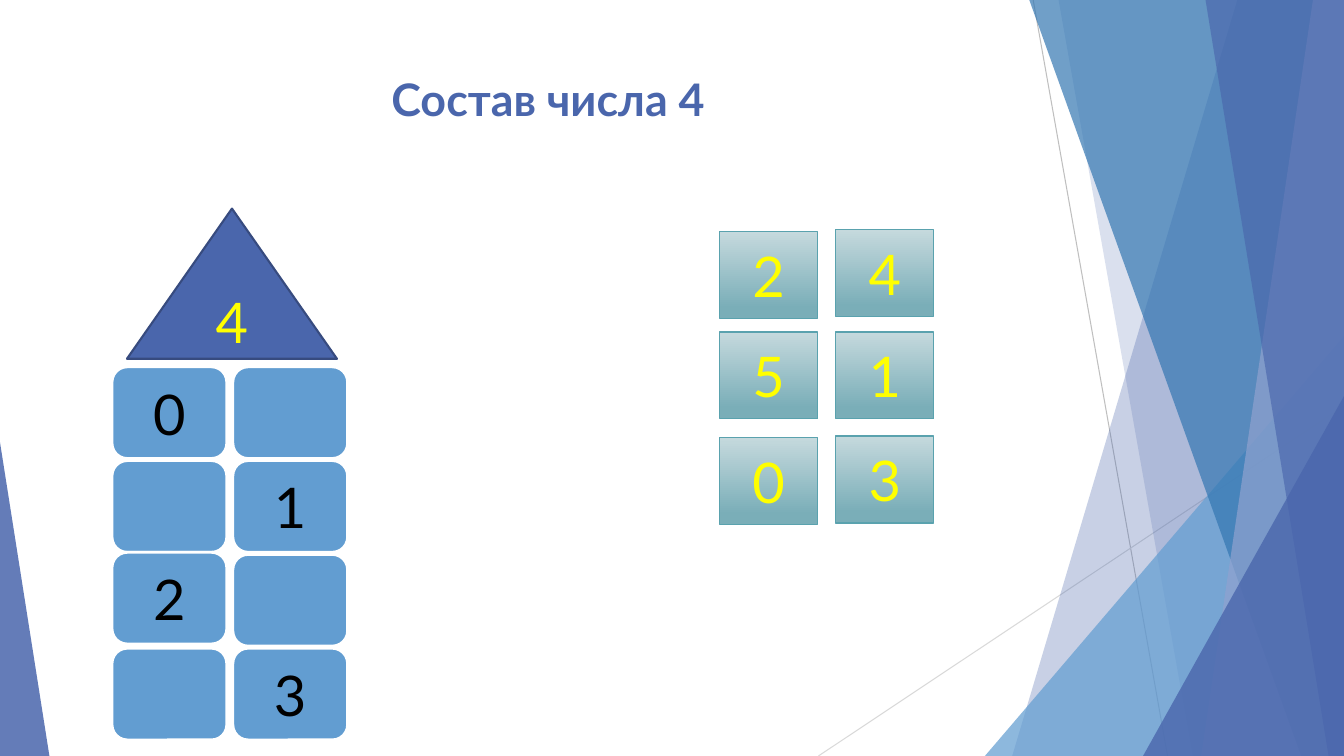
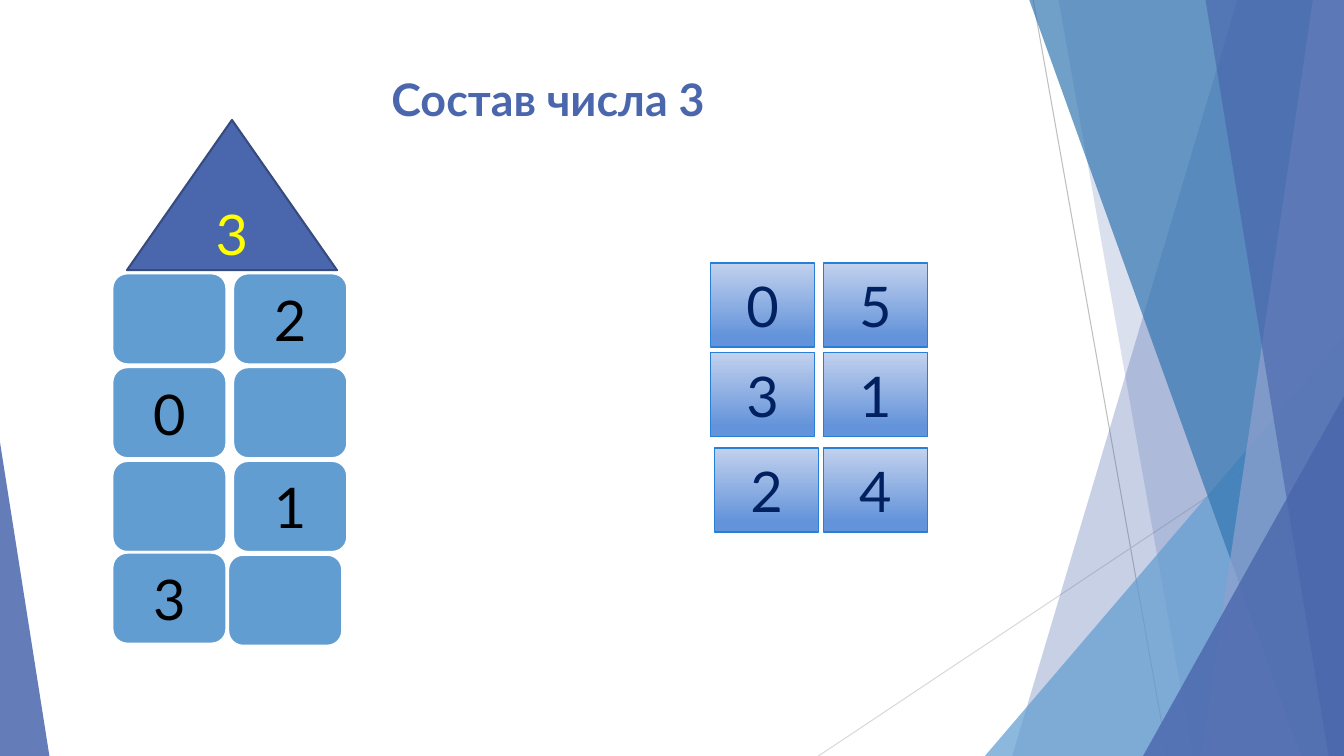
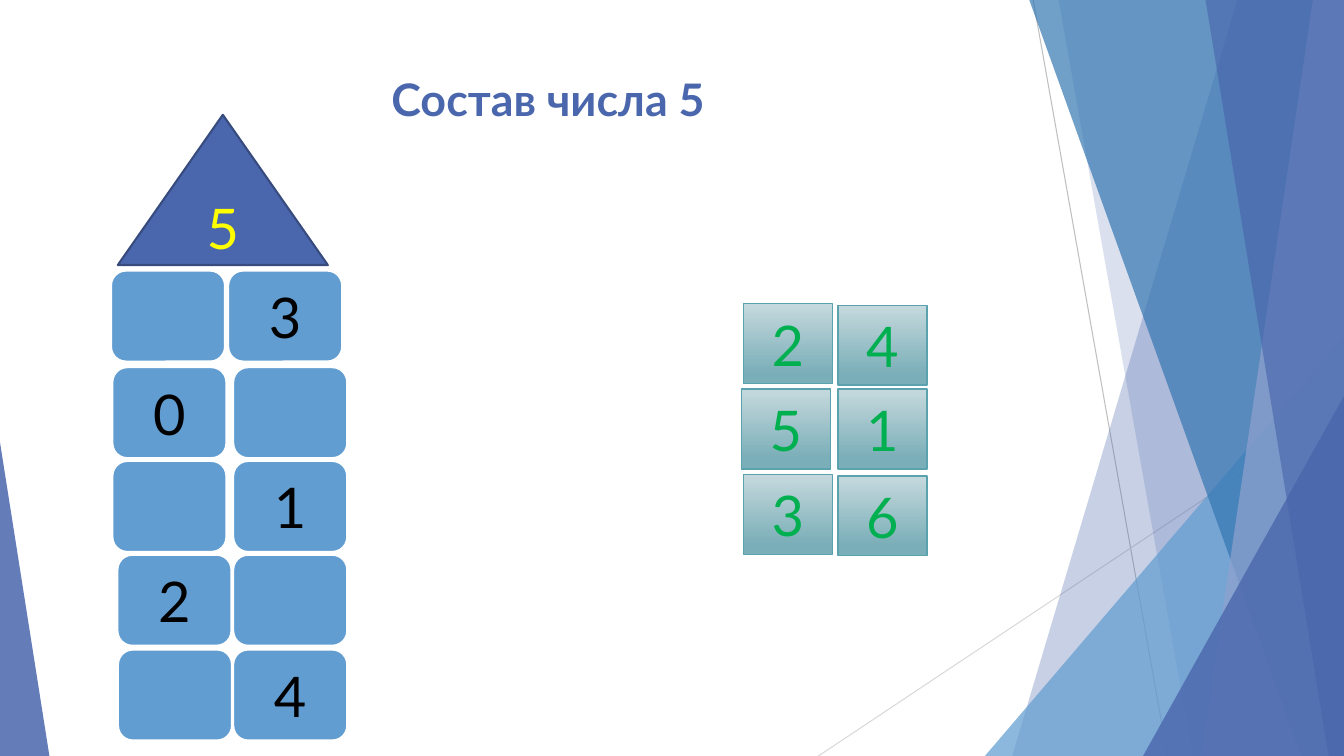
from lxml import etree
from pptx import Presentation
from pptx.dml import color as dml
from pptx.enum import shapes, text
from pptx.oxml import ns
from pptx.util import Pt

PAGE = (0, 0, 960, 540)
FONT = "Lato"
COLOURS = {
    "indigo": "4A66AC", "indigo_edge": "374B7F", "sky": "629DD1",
    "blue": "3477B2", "lavender": "90A2CF", "white": "FFFFFF",
    "black": "000000", "yellow": "FFFF00", "navy": "002060",
    "green": "00B050", "dark_rule": "BFBFBF", "light_rule": "D9D9D9",
    "teal_top": "C5D9DD", "teal_base": "7AAEB8", "teal_edge": "5AA2AE",
    "azure_top": "C2D1EE", "azure_base": "6393DA", "azure_edge": "297FD5",
}
TITLE_FORMAT = {"name": FONT, "size": Pt(32), "bold": True}
DIGIT_FORMAT = {"name": FONT, "size": Pt(40), "bold": False}
TITLE_BOX = (53, 48, 677, 104)
CELL = (82, 65.5)
CELL_PITCH = (86.3, 67)
ROOF = (150, 107.3)

# Nudges shift single cells off the regular grid: (row, column): (dx, dy)
LESSONS = [
    {
        "number": "4",
        "house": {
            "origin": (80, 262), "roof_shift": (10.7, -113),
            "rows": [("0", ""), ("", "1"), ("2", ""), ("", "3")],
            "nudges": {(2, 0): (0, -1.5)},
        },
        "cards": {
            "origin": (514, 165.5), "size": (70, 62), "pitch": (83, 73),
            "rows": ["24", "51", "03"], "tone": "teal", "ink": "yellow",
            "nudges": {(0, 1): (0, -1.5), (1, 0): (0, -1.5),
                       (1, 1): (0, -1.5), (2, 0): (0, 1)},
        },
    },
    {
        "number": "3",
        "house": {
            "origin": (80, 195), "roof_shift": (10.7, -109.3),
            "rows": [("", "2"), ("0", ""), ("", "1"), ("3", "")],
            "nudges": {(3, 0): (0, -1.5), (3, 1): (-3.6, 0)},
        },
        "cards": {
            "origin": (507.5, 188), "size": (74.3, 60), "pitch": (80.6, 66),
            "rows": ["05", "31", "24"], "tone": "azure", "ink": "navy",
            "nudges": {(1, 0): (0, -2), (1, 1): (0, -2), (2, 0): (3, 0)},
        },
    },
    {
        "number": "5",
        "house": {
            "origin": (80, 195), "roof_shift": (4.2, -113),
            "rows": [("", "3"), ("0", ""), ("", "1"), ("2", ""), ("", "4")],
            "nudges": {(0, 0): (-1, -2), (0, 1): (-3.6, -2),
                       (3, 0): (3.6, 0), (4, 0): (4, 0.7), (4, 1): (0, 0.7)},
        },
        "cards": {
            "origin": (531, 217), "size": (63.6, 57), "pitch": (67.5, 61),
            "rows": ["24", "51", "36"], "tone": "teal", "ink": "green",
            "nudges": {(0, 1): (0, 1), (1, 0): (-1.5, 0), (2, 1): (0, 1)},
        },
    },
]


def rgb(name):
    return dml.RGBColor.from_string(COLOURS[name])


def points(values):
    return [Pt(value) for value in values]


def paint(shape, colour, opacity=None):
    """Fill without outline or shadow; opacity is a percentage."""
    shape.shadow.inherit = False
    shape.line.fill.background()
    shape.fill.solid()
    shape.fill.fore_color.rgb = rgb(colour)
    if opacity is not None:
        swatch = shape.fill._xPr.find(".//" + ns.qn("a:srgbClr"))
        etree.SubElement(swatch, ns.qn("a:alpha"), val=str(opacity * 1000))


def outline(shape, colour, width):
    shape.line.color.rgb = rgb(colour)
    shape.line.width = Pt(width)


def shade(shape, top, base):
    shape.fill.gradient()
    shape.fill.gradient_angle = 270
    for stop, place, colour in zip(shape.fill.gradient_stops, (0, 0.88), (top, base)):
        stop.position = place
        stop.color.rgb = rgb(colour)


def write(shape, words, formats, colour):
    para = shape.text_frame.paragraphs[0]
    para.alignment = text.PP_ALIGN.CENTER
    span = para.add_run()
    span.text = words
    for name, value in formats.items():
        setattr(span.font, name, value)
    span.font.color.rgb = rgb(colour)


def add_digit_shape(page, kind, box, fill, edge, width, digit, ink):
    shape = page.shapes.add_shape(kind, *points(box))
    paint(shape, fill)
    outline(shape, edge, width)
    if digit:
        shape.text_frame.vertical_anchor = text.MSO_ANCHOR.MIDDLE
        write(shape, digit, DIGIT_FORMAT, ink)
    return shape


def grid(origin, size, pitch, rows, nudges):
    """Yield the box and the digit of each cell."""
    for row, digits in enumerate(rows):
        for column, digit in enumerate(digits):
            dx, dy = nudges.get((row, column), (0, 0))
            yield (origin[0] + column * pitch[0] + dx,
                   origin[1] + row * pitch[1] + dy, *size), digit


def add_rule(page, box, start, end, colour):
    left, top = box[:2]
    ends = points((left + start[0], top + start[1], left + end[0], top + end[1]))
    rule = page.shapes.add_connector(shapes.MSO_CONNECTOR.STRAIGHT, *ends)
    outline(rule, colour, 0.75)
    etree.SubElement(rule._element.spPr, ns.qn("a:effectLst"))


def add_band(page, box, top_x, bottom_x, colour, opacity):
    """Slanted band from its left edge to the right side of the box."""
    left, top, width, height = box
    corners = [(left + top_x, top - 0.7), (left + width, top - 0.7),
               (left + width, top + height), (left + bottom_x, top + height)]
    start, *others = [tuple(points(corner)) for corner in corners]
    builder = page.shapes.build_freeform(*start, scale=1.0)
    builder.add_line_segments(others, close=True)
    paint(builder.convert_to_shape(), colour, opacity)


def add_wedge(page, box, size, on_right, colour, opacity):
    """Right triangle standing in a lower corner of the box."""
    left, top, width, height = box
    x = left + width - size[0] if on_right else left
    wedge = page.shapes.add_shape(
        shapes.MSO_SHAPE.ISOSCELES_TRIANGLE,
        *points((x, top + height - size[1], *size)))
    wedge.adjustments[0] = 1 if on_right else 0
    paint(wedge, colour, opacity)


def add_backdrop(page, box):
    add_rule(page, box, (738, 0), (834, 540), "dark_rule")
    add_rule(page, box, (960, 290), (584.6, 540), "light_rule")
    add_band(page, box, 884, 723, "indigo", 30)
    add_band(page, box, 756, 852, "indigo", 20)
    add_wedge(page, box, (256.5, 300), True, "sky", 72)
    add_band(page, box, 735, 929.5, "blue", 70)
    add_band(page, box, 938, 858, "lavender", 70)
    add_band(page, box, 861, 949, "indigo", 65)
    add_wedge(page, box, (143.5, 257), True, "indigo", 80)
    add_wedge(page, box, (35.3, 224), False, "indigo", 85)


def add_title(page, box, words):
    title = page.shapes.add_textbox(*points(box))
    title.text_frame.word_wrap = True
    write(title, words, TITLE_FORMAT, "indigo")


def add_house(page, number, origin, roof_shift, rows, nudges):
    for box, digit in grid(origin, CELL, CELL_PITCH, rows, nudges):
        add_digit_shape(page, shapes.MSO_SHAPE.ROUNDED_RECTANGLE, box,
                        "sky", "white", 2, digit, "black")
    corner = [start + shift for start, shift in zip(origin, roof_shift)]
    add_digit_shape(page, shapes.MSO_SHAPE.ISOSCELES_TRIANGLE, (*corner, *ROOF),
                    "indigo", "indigo_edge", 1.5, number, "yellow")


def add_cards(page, origin, size, pitch, rows, nudges, tone, ink):
    for box, digit in grid(origin, size, pitch, rows, nudges):
        card = add_digit_shape(page, shapes.MSO_SHAPE.RECTANGLE, box,
                               tone + "_base", tone + "_edge", 1, digit, ink)
        shade(card, tone + "_top", tone + "_base")


def add_lesson(deck, lesson):
    page = deck.slides.add_slide(deck.slide_layouts[6])
    add_backdrop(page, PAGE)
    add_title(page, TITLE_BOX, f"Состав числа {lesson['number']}")
    add_house(page, lesson["number"], **lesson["house"])
    add_cards(page, **lesson["cards"])


def main():
    deck = Presentation()
    deck.slide_width, deck.slide_height = points(PAGE[2:])
    for lesson in LESSONS:
        add_lesson(deck, lesson)
    deck.save("out.pptx")


if __name__ == "__main__":
    main()
